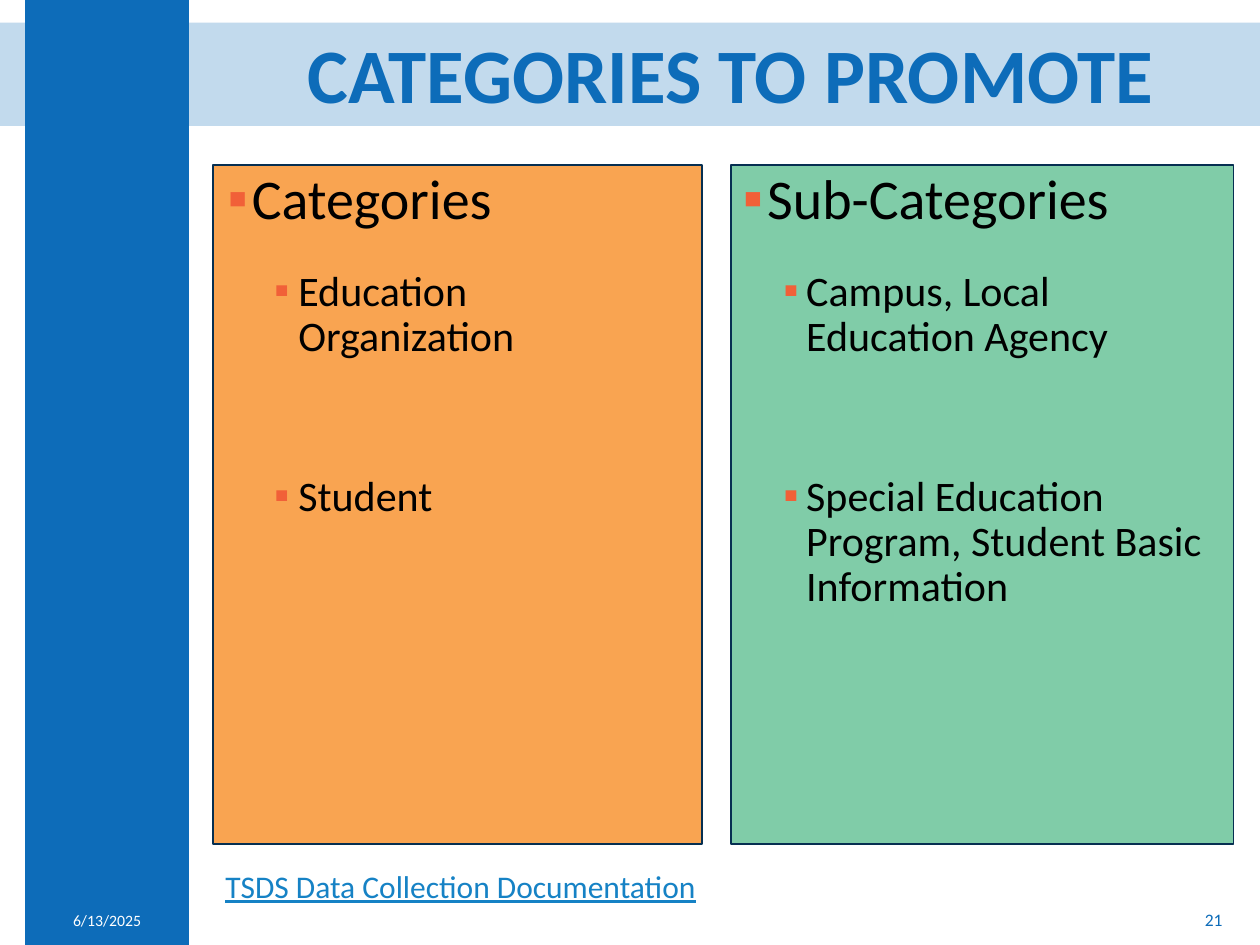
from pptx import Presentation
from pptx import util as u
from pptx.dml import color
from pptx.enum import shapes, text
from pptx.oxml import ns, xmlchemy

WIDE, HIGH = u.Inches(10), u.Inches(7.5)
BLUE = "0D6CB9"
MID, TOP = text.MSO_ANCHOR.MIDDLE, text.MSO_ANCHOR.TOP
LEFT, CENTER, RIGHT = text.PP_ALIGN.LEFT, text.PP_ALIGN.CENTER, text.PP_ALIGN.RIGHT


def rgb(code):
    return color.RGBColor.from_string(code)


def spot(box):
    """Turn a box in percent of the slide into lengths."""
    return [int(part * side / 100) for part, side in zip(box, (WIDE, HIGH) * 2)]


def add(parent, tag, **attrs):
    item = xmlchemy.OxmlElement(tag)
    for key, value in attrs.items():
        item.set(key, value)
    parent.append(item)
    return item


def style(font, tint, **form):
    for key, value in {"name": "Calibri", **form}.items():
        setattr(font, key, value)
    font.color.rgb = rgb(tint)


def block(slide, box, fill, line=None, alpha=None):
    shape = slide.shapes.add_shape(shapes.MSO_SHAPE.RECTANGLE, *spot(box))
    shape.shadow.inherit = False
    shape.fill.solid()
    shape.fill.fore_color.rgb = rgb(fill)
    if alpha:
        tone = shape.fill._xPr.find(".//" + ns.qn("a:srgbClr"))
        add(tone, "a:alpha", val=str(alpha * 1000))
    if line:
        shape.line.color.rgb = rgb(line)
        shape.line.width = u.Pt(1)
    else:
        shape.line.fill.background()


def frame(slide, box, anchor=TOP):
    body = slide.shapes.add_textbox(*spot(box)).text_frame
    body.word_wrap = True
    body.vertical_anchor = anchor
    return body


def label(slide, box, words, tint, align=LEFT, anchor=MID, **form):
    para = frame(slide, box, anchor).paragraphs[0]
    para.alignment = align
    run = para.add_run()
    run.text = words
    style(run.font, tint, **form)


def bullet(para, words, size, margin, hang, gap):
    props = para._p.get_or_add_pPr()
    props.set("marL", str(u.Inches(margin)))
    props.set("indent", str(-u.Inches(hang)))
    add(add(props, "a:buClr"), "a:srgbClr", val="F16038")
    add(props, "a:buFont", typeface="Calibri")
    add(props, "a:buChar", char="▪")
    para.line_spacing = 0.9
    if gap:
        para.space_before = u.Pt(gap)
    run = para.add_run()
    run.text = words
    style(run.font, "000000", size=u.Pt(size))


def panel(slide, box, fill, head, items, inset, margin, hang):
    """Draw a filled column with a heading and its spaced items."""
    block(slide, box, fill, line="062F51")
    left, top, width, height = box
    body = frame(slide, (left + inset, top, width - inset, height))
    bullet(body.paragraphs[0], head, 32, 0.19, 0.19, 0)
    for words, gap in zip(items, (22, 65)):
        bullet(body.add_paragraph(), words, 24, margin, hang, gap)


def backdrop(slide):
    block(slide, (0, 2.4, 100, 10.93), BLUE, alpha=25)
    block(slide, (2, 0, 13, 100), BLUE)


def footer(slide, top, height):
    label(slide, (2, top, 13, height), "6/13/2025", "FFFFFF", CENTER, size=u.Pt(9))
    label(slide, (75.5, top, 22.5, height), "21", BLUE, RIGHT, size=u.Pt(10))


def main():
    deck = Presentation()
    deck.slide_width, deck.slide_height = WIDE, HIGH
    slide = deck.slides.add_slide(deck.slide_layouts[6])
    backdrop(slide)
    label(slide, (19, 2.27, 78, 10.93), "CATEGORIES TO PROMOTE", BLUE, CENTER,
          size=u.Pt(44), bold=True)
    top, height = 17.47, 71.87
    panel(slide, (16.9, top, 38.8, height), "F9A451", "Categories",
          ("Education Organization", "Student"), 0.2, 0.56, 0.19)
    panel(slide, (58, top, 39.9, height), "80CCA8", "Sub-Categories",
          ("Campus, Local Education Agency",
           "Special Education Program, Student Basic Information"), 0, 0.5, 0.18)
    label(slide, (16.9, 91.07, 40.1, 5.33), "TSDS Data Collection Documentation",
          "1682C5", anchor=TOP, size=u.Pt(18), underline=True)
    footer(slide, 94.67, 5.33)
    deck.save("out.pptx")


if __name__ == "__main__":
    main()
